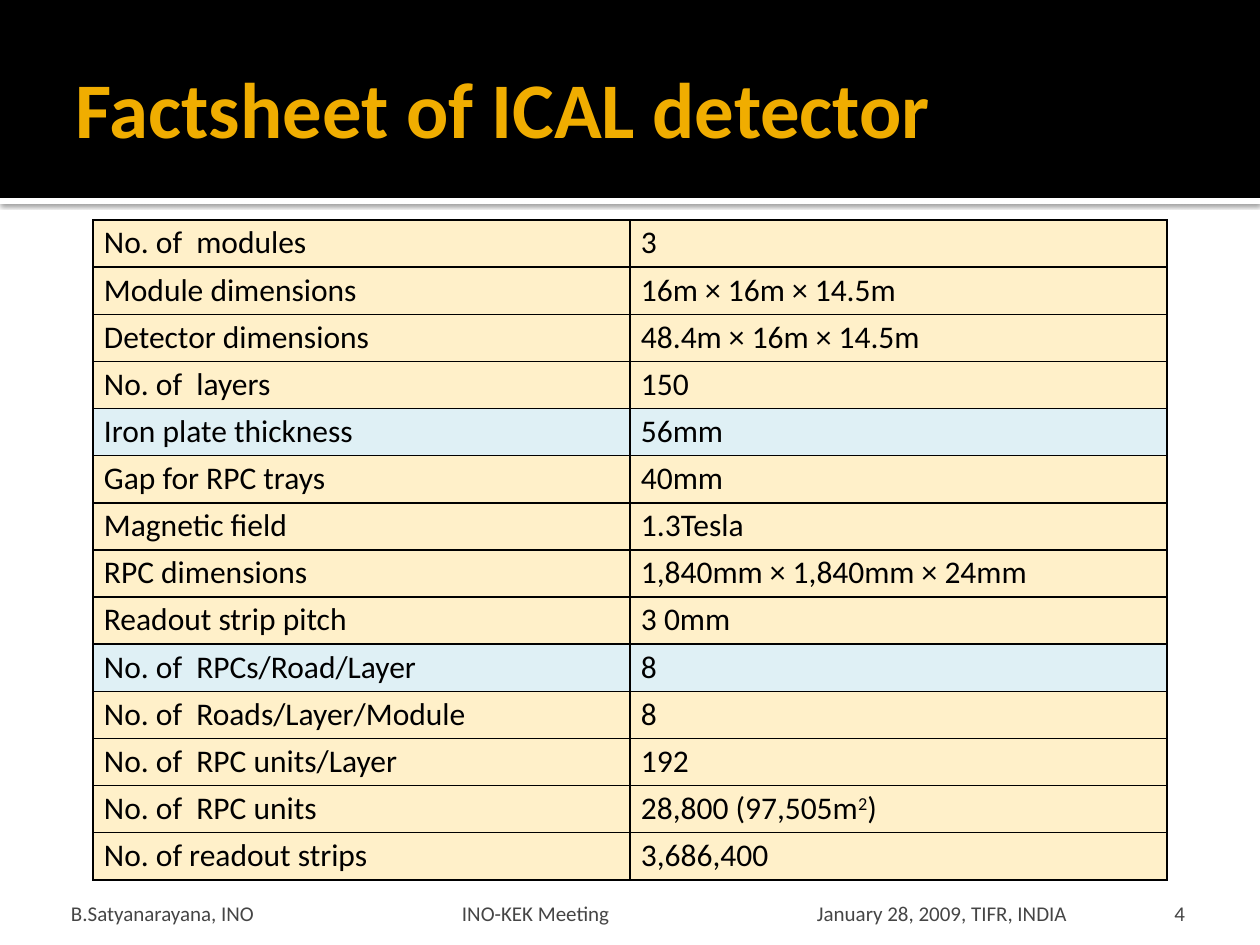
from lxml import etree
from pptx import Presentation
from pptx import util as u
from pptx.dml.color import RGBColor
from pptx.enum import shapes, text
from pptx.oxml.ns import qn

SCALE = 914400 // 126  # EMU per px
FONT = "Calibri"
COLORS = {"black": "000000", "white": "FFFFFF", "title": "F0AD00",
          "footer": "454545", "cream": "FFF0C9", "blue": "DFF0F5"}
FACTS = [
    ("No. of  modules", "3"),
    ("Module dimensions", "16m × 16m × 14.5m"),
    ("Detector dimensions", "48.4m × 16m × 14.5m"),
    ("No. of  layers", "150"),
    ("Iron plate thickness", "56mm"),
    ("Gap for RPC trays", "40mm"),
    ("Magnetic field", "1.3Tesla"),
    ("RPC dimensions", "1,840mm × 1,840mm × 24mm"),
    ("Readout strip pitch", "3 0mm"),
    ("No. of  RPCs/Road/Layer", "8"),
    ("No. of  Roads/Layer/Module", "8"),
    ("No. of  RPC units/Layer", "192"),
    ("No. of  RPC units", "28,800 (97,505m^2^)"),  # ^...^ is superscript
    ("No. of readout strips", "3,686,400"),
]
BLUE_ROWS = (4, 9)


def px(n):
    return u.Emu(n * SCALE)


def rgb(name):
    return RGBColor.from_string(COLORS[name])


def sub(parent, tag, **attrs):
    return etree.SubElement(parent, qn(tag), {k: str(v) for k, v in attrs.items()})


def add_run(p, words, size, color, bold=False, raised=False):
    r = p.add_run()
    r.text = words
    r.font.name, r.font.size, r.font.bold = FONT, u.Pt(size), bold
    r.font.color.rgb = rgb(color)
    if raised:
        r.font._element.set("baseline", "30000")


def set_frame(tf, left, top, right, bottom):
    tf.word_wrap = True
    tf.auto_size = text.MSO_AUTO_SIZE.NONE
    tf.vertical_anchor = text.MSO_ANCHOR.MIDDLE
    tf.margin_left, tf.margin_top = px(left), px(top)
    tf.margin_right, tf.margin_bottom = px(right), px(bottom)


def add_band(s, top, height, color, shadow=False):
    sp = s.shapes.add_shape(shapes.MSO_SHAPE.RECTANGLE, 0, px(top), px(1260), px(height))
    sp.shadow.inherit = False
    sp.fill.solid()
    sp.fill.fore_color.rgb = rgb(color)
    sp.line.fill.background()
    if shadow:
        effects = sp._element.spPr.find(qn("a:effectLst"))
        outer = sub(effects, "a:outerShdw", blurRad=u.Pt(2.5), dist=u.Pt(0.8),
                    dir=90 * 60000, algn="t", rotWithShape=0)
        sub(sub(outer, "a:srgbClr", val=COLORS["black"]), "a:alpha", val=60000)


def set_title(s, words):
    sp = s.shapes.title
    sp.left, sp.top, sp.width, sp.height = px(63), px(21), px(1134), px(173)
    s.shapes._spTree.append(sp._element)  # in front of the bands
    set_frame(sp.text_frame, 13, 6, 6, 6)
    p = sp.text_frame.paragraphs[0]
    p.alignment = text.PP_ALIGN.LEFT
    add_run(p, words, 45, "title", bold=True)


def add_footer(s, left, width, words, inset, align, tabs=()):
    tf = s.shapes.add_textbox(px(left), px(893), px(width), px(35)).text_frame
    set_frame(tf, inset, 6, 6 if tabs else inset, 0)
    p = tf.paragraphs[0]
    p.alignment = align
    if tabs:
        stops = sub(p._p.get_or_add_pPr(), "a:tabLst")
        for tab in tabs:
            sub(stops, "a:tab", pos=px(tab), algn="l")
    add_run(p, words, 12, "footer")


def fill_cell(cell, words, color):
    cell.margin_left = cell.margin_right = px(11)
    cell.margin_top = cell.margin_bottom = px(4)
    p = cell.text_frame.paragraphs[0]
    for i, part in enumerate(words.split("^")):
        add_run(p, part, 18, "black", raised=i % 2 == 1)
    tcPr = cell._tc.get_or_add_tcPr()
    for side in ("a:lnL", "a:lnR", "a:lnT", "a:lnB"):
        ln = sub(tcPr, side, w=u.Pt(1))
        sub(sub(ln, "a:solidFill"), "a:srgbClr", val=COLORS["black"])
    cell.fill.solid()
    cell.fill.fore_color.rgb = rgb(color)


def add_facts(s):
    table = s.shapes.add_table(len(FACTS), 2, px(93), px(220), px(1074), px(660)).table
    table.first_row = table.horz_banding = False
    for i, fact in enumerate(FACTS):
        for j, words in enumerate(fact):
            fill_cell(table.cell(i, j), words, "blue" if i in BLUE_ROWS else "cream")


def main():
    prs = Presentation()
    prs.slide_width, prs.slide_height = px(1260), px(945)
    s = prs.slides.add_slide(prs.slide_layouts[5])

    # Header
    add_band(s, 198, 6, "white", shadow=True)
    add_band(s, 0, 198, "black")
    set_title(s, "Factsheet of ICAL detector")

    # Footer
    add_footer(s, 25, 1091, "B.Satyanarayana, INO\tINO-KEK Meeting\tJanuary 28, 2009, TIFR, INDIA",
               46, text.PP_ALIGN.LEFT, tabs=(391, 746))
    add_footer(s, 1130, 68, "4", 13, text.PP_ALIGN.RIGHT)

    # Fact table
    add_facts(s)
    prs.save("out.pptx")


if __name__ == "__main__":
    main()
